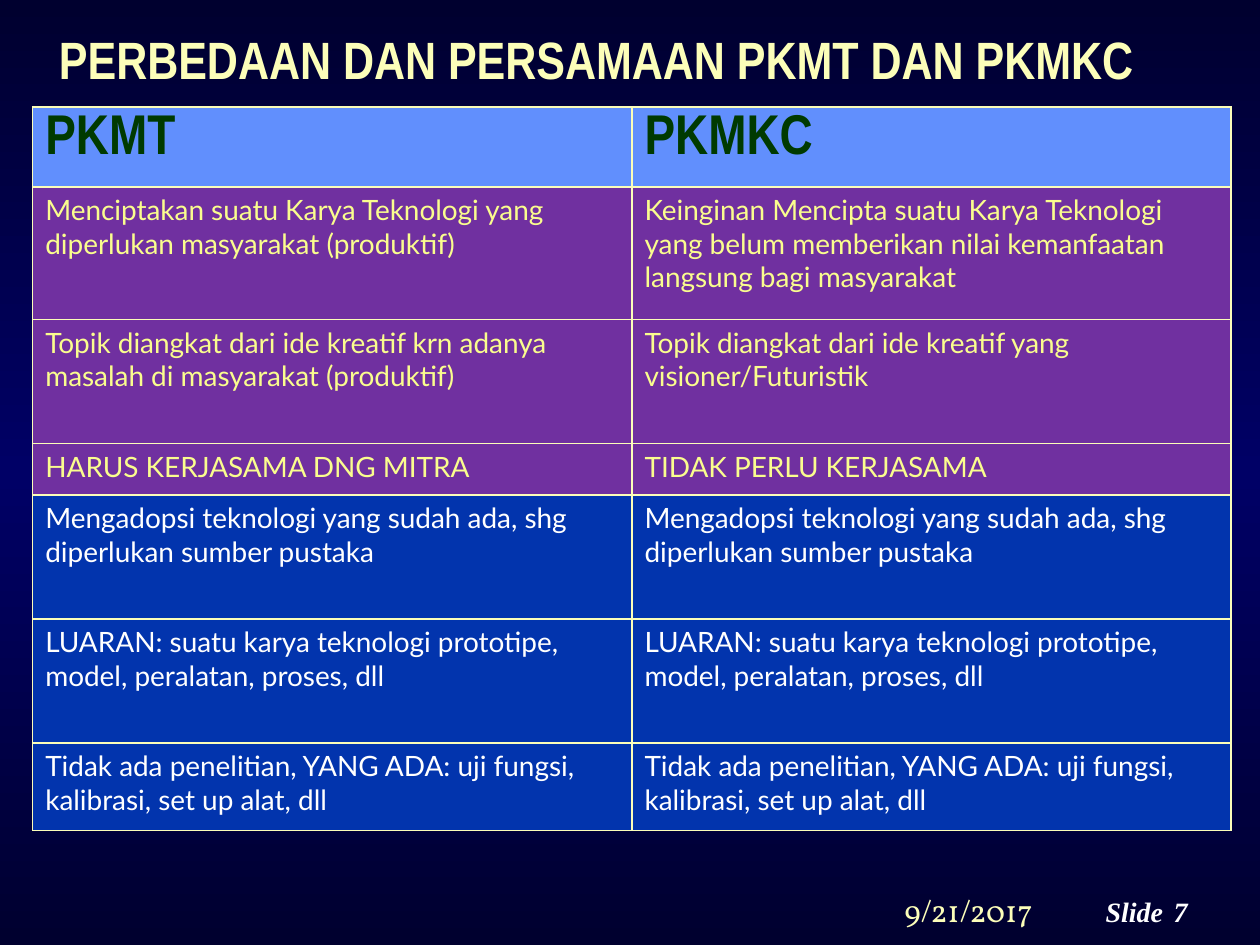
from copy import deepcopy

from lxml.etree import SubElement
from pptx import Presentation
from pptx.dml.color import RGBColor
from pptx.oxml.ns import qn
from pptx.util import Cm, Pt

NAVY = RGBColor(0x00, 0x00, 0x2F)
MIDNIGHT = RGBColor(0x00, 0x00, 0x66)
CREAM = RGBColor(0xFC, 0xFE, 0xB9)
YELLOW = RGBColor(0xFA, 0xFD, 0x8E)
WHITE = RGBColor(0xFF, 0xFF, 0xFF)
GREEN = RGBColor(0x00, 0x3A, 0x00)
SKY = RGBColor(0x61, 0x8F, 0xFD)
PURPLE = RGBColor(0x70, 0x30, 0xA0)
BLUE = RGBColor(0x02, 0x34, 0xAD)

TITLE = {"name": "Arial Narrow", "size": Pt(30), "bold": True, "color": CREAM}
HEADER = {"name": "Arial Narrow", "size": Pt(32), "bold": True, "color": GREEN}
DIFFERENCE = {"name": "Lato", "size": Pt(16), "bold": False, "color": YELLOW}
SIMILARITY = {**DIFFERENCE, "color": WHITE}
DATE = {"name": "Vollkorn", "size": Pt(18), "color": CREAM}
NUMBER = {"name": "Times New Roman", "size": Pt(16), "bold": True,
          "italic": True, "color": WHITE}

ADOPTION = "Mengadopsi teknologi yang sudah ada, shg diperlukan sumber pustaka"
OUTPUT = "LUARAN: suatu karya teknologi prototipe, model, peralatan, proses, dll"
TESTING = "Tidak ada penelitian, YANG ADA: uji fungsi, kalibrasi, set up alat, dll"

ROWS = [
    (1.61, SKY, HEADER, ("PKMT", "PKMKC")),
    (2.67, PURPLE, DIFFERENCE, (
        "Menciptakan suatu Karya Teknologi yang diperlukan masyarakat (produktif)",
        "Keinginan Mencipta suatu Karya Teknologi yang belum memberikan nilai "
        "kemanfaatan langsung bagi masyarakat")),
    (2.5, PURPLE, DIFFERENCE, (
        "Topik diangkat dari ide kreatif krn adanya masalah di masyarakat (produktif)",
        "Topik diangkat dari ide kreatif yang visioner/Futuristik")),
    (1.04, PURPLE, DIFFERENCE, ("HARUS KERJASAMA DNG MITRA", "TIDAK PERLU KERJASAMA")),
    (2.5, BLUE, SIMILARITY, (ADOPTION, ADOPTION)),
    (2.5, BLUE, SIMILARITY, (OUTPUT, OUTPUT)),
    (1.76, BLUE, SIMILARITY, (TESTING, TESTING)),
]


def write_text(text_frame, text, font_format):
    """Write one formatted run into a text frame."""
    run = text_frame.paragraphs[0].add_run()
    run.text = text
    for attribute, value in font_format.items():
        if attribute == "color":
            run.font.color.rgb = value
        else:
            setattr(run.font, attribute, value)


def add_text(slide, box, text, font_format, wrap=True):
    """Add a text box in the given box of centimetres."""
    shape = slide.shapes.add_textbox(*(Cm(length) for length in box))
    shape.text_frame.word_wrap = wrap
    write_text(shape.text_frame, text, font_format)


def add_borders(cell, color, width):
    """Draw a solid line on all four sides of a cell."""
    properties = cell._tc.get_or_add_tcPr()
    for side in ("a:lnL", "a:lnR", "a:lnT", "a:lnB"):
        line = SubElement(properties, qn(side), w=str(width))
        fill = SubElement(line, qn("a:solidFill"))
        SubElement(fill, qn("a:srgbClr"), val=str(color))


def add_background(slide):
    """Fill the background with a vertical gradient, brightest in the middle."""
    fill = slide.background.fill
    fill.gradient()
    fill.gradient_angle = 90
    stop_list = slide.element.xpath(".//a:gsLst")[0]
    stop_list.append(deepcopy(stop_list[0]))
    for stop, color, position in zip(
            fill.gradient_stops, (NAVY, MIDNIGHT, NAVY), (0, 0.5, 1)):
        stop.color.rgb = color
        stop.position = position


def add_comparison(slide, left, top, width):
    """Add the two-column comparison table."""
    total_height = sum(row[0] for row in ROWS)
    table = slide.shapes.add_table(
        len(ROWS), 2, Cm(left), Cm(top), Cm(width), Cm(total_height)).table
    for column in table.columns:
        column.width = Cm(width / 2)
    for row, (height, color, font_format, texts) in zip(table.rows, ROWS):
        row.height = Cm(height)
        for cell, text in zip(row.cells, texts):
            write_text(cell.text_frame, text, font_format)
            add_borders(cell, CREAM, Pt(1))
            cell.fill.solid()
            cell.fill.fore_color.rgb = color


def add_footer(slide, left, top):
    """Add the date, the slide label and the slide number."""
    add_text(slide, (left, top, 4, 1.02), "9/21/2017", DATE)
    add_text(slide, (left + 4.06, top + 0.08, 1.8, 0.91), "Slide", NUMBER, False)
    add_text(slide, (left + 5.43, top + 0.08, 1.2, 0.91), "7", NUMBER, False)


def main():
    """Build the slide and save it."""
    presentation = Presentation()
    presentation.slide_width = Cm(25.4)
    presentation.slide_height = Cm(19.05)
    slide = presentation.slides.add_slide(presentation.slide_layouts[6])
    add_background(slide)
    add_comparison(slide, 0.66, 2.16, 24.16)
    add_text(slide, (0.94, 0.43, 23.52, 1.55),
             "PERBEDAAN DAN PERSAMAAN PKMT DAN PKMKC", TITLE)
    add_footer(slide, 17.98, 17.83)
    presentation.save("out.pptx")


if __name__ == "__main__":
    main()
